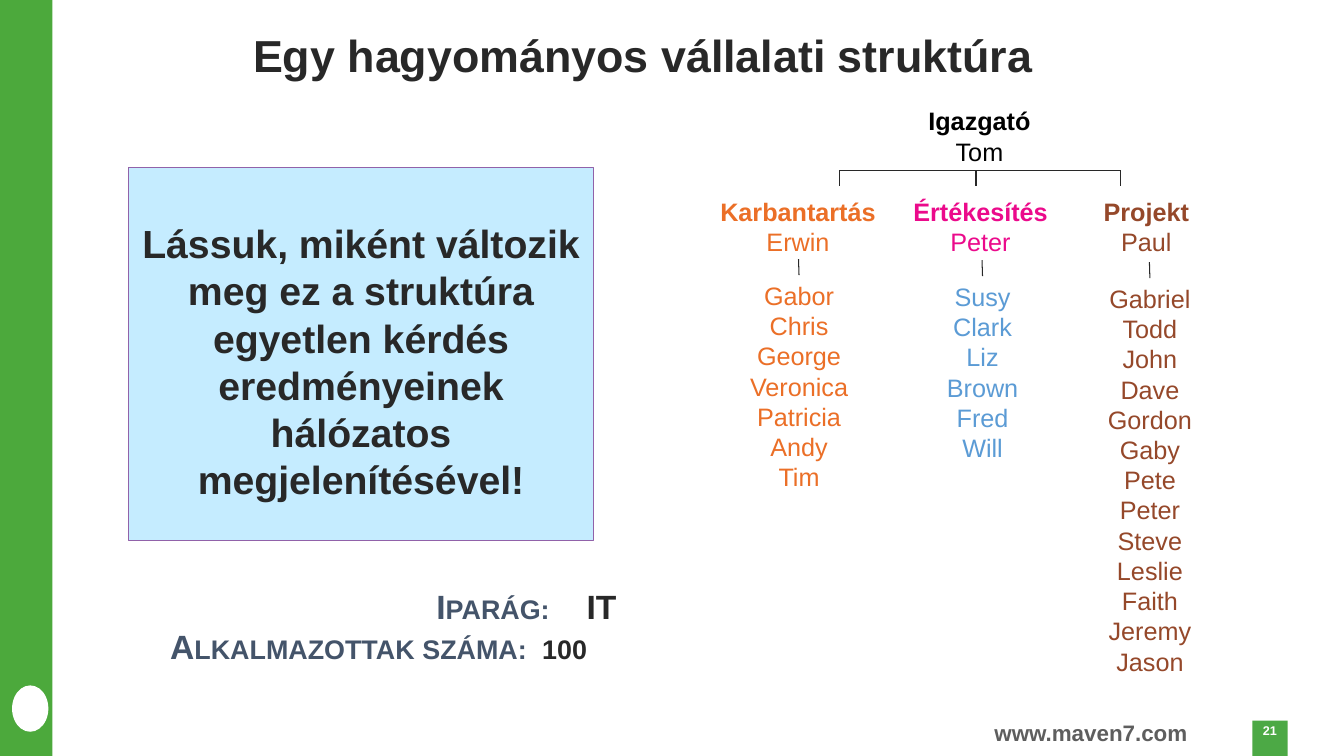
from pptx import Presentation
from pptx.dml.color import RGBColor
from pptx.enum.shapes import MSO_CONNECTOR, MSO_SHAPE
from pptx.enum.text import MSO_ANCHOR, PP_ALIGN
from pptx.oxml.ns import qn
from pptx.util import Pt
from lxml import etree

PX = 9144  # 100 px to the inch
RECT, OVAL = MSO_SHAPE.RECTANGLE, MSO_SHAPE.OVAL
STRAIGHT = MSO_CONNECTOR.STRAIGHT
LEFT, CENTER = PP_ALIGN.LEFT, PP_ALIGN.CENTER
TOP, MIDDLE = MSO_ANCHOR.TOP, MSO_ANCHOR.MIDDLE

WHITE = RGBColor(0xFF, 0xFF, 0xFF)
BLACK = RGBColor(0, 0, 0)
INK = RGBColor(0x28, 0x28, 0x28)
GREY = RGBColor(0x5E, 0x5E, 0x5E)
SLATE = RGBColor(0x44, 0x54, 0x6A)
BAND_GREEN = RGBColor(0x4C, 0xA9, 0x3C)
TAG_GREEN = RGBColor(0x4C, 0xA9, 0x45)
PALE_BLUE = RGBColor(0xC5, 0xEC, 0xFF)
PURPLE = RGBColor(0x91, 0x62, 0xA9)
ORANGE = RGBColor(0xEB, 0x6F, 0x27)
PINK = RGBColor(0xEB, 0x0A, 0x8B)
BLUE = RGBColor(0x5B, 0x9B, 0xD5)
BROWN = RGBColor(0x95, 0x48, 0x2A)

HEAD_H = 71
# head, its colour, head box left and width, team colour, team box left, top and height, team
DEPARTMENTS = [
    (("Karbantartás", "Erwin"), ORANGE, 690, 203, ORANGE, 707, 273, 222,
     ("Gabor", "Chris", "George", "Veronica", "Patricia", "Andy", "Tim")),
    (("Értékesítés", "Peter"), PINK, 892, 161, BLUE, 889, 274, 192,
     ("Susy", "Clark", "Liz", "Brown", "Fred", "Will")),
    (("Projekt", "Paul"), BROWN, 1053, 168, BROWN, 1055, 276, 404,
     ("Gabriel", "Todd", "John", "Dave", "Gordon", "Gaby", "Pete", "Peter",
      "Steve", "Leslie", "Faith", "Jeremy", "Jason")),
]


def emu(*lengths):
    return [n * PX for n in lengths]


def style(p, size, color, bold=False, align=CENTER):
    p.alignment = align
    f = p.font
    f.name, f.size, f.bold, f.color.rgb = "Arial", Pt(size), bold, color


def fill_text(sp, lines, size, color, bold=(), align=CENTER, anchor=TOP):
    """Write one paragraph per line; bold holds the indexes of the bold ones."""
    tf = sp.text_frame
    tf.word_wrap, tf.vertical_anchor = True, anchor
    for i, line in enumerate(lines):
        p = tf.paragraphs[0] if i == 0 else tf.add_paragraph()
        p.text = line
        style(p, size, color, i in bold, align)
    return sp


def add_text(s, box, lines, size, color, bold=()):
    return fill_text(s.shapes.add_textbox(*emu(*box)), lines, size, color, bold)


def add_block(s, kind, box, fill, line=None):
    sp = s.shapes.add_shape(kind, *emu(*box))
    sp.shadow.inherit = False
    sp.fill.solid()
    sp.fill.fore_color.rgb = fill
    if line is None:
        sp.line.fill.background()
    else:
        sp.line.color.rgb, sp.line.width = line, Pt(0.75)
    return sp


def add_line(s, x1, y1, x2, y2):
    c = s.shapes.add_connector(STRAIGHT, *emu(x1, y1, x2, y2))
    c.line.color.rgb, c.line.width = INK, Pt(0.75)
    etree.SubElement(c._element.spPr, qn("a:effectLst"))
    return c


def add_frame(s, width, height):
    """Side band with its emblem, page number and web address."""
    add_block(s, RECT, (0, 0, 52, height), BAND_GREEN)
    add_block(s, OVAL, (12, 680, 36, 46), WHITE)
    tag = add_block(s, RECT, (width - 91, height - 35, 35, 35), TAG_GREEN)
    tf = tag.text_frame
    tf.margin_left = tf.margin_right = tf.margin_bottom = 0
    tf.margin_top = 2 * PX
    fill_text(tag, ["21"], 9, WHITE, bold=(0,))
    add_text(s, (942, height - 41, 280, 37), ["www.maven7.com"], 16, GREY, bold=(0,))


def add_title(s, box, text):
    sp = s.shapes.title
    sp.left, sp.top, sp.width, sp.height = emu(*box)
    fill_text(sp, [text], 32, INK, bold=(0,), align=LEFT, anchor=MIDDLE)
    sp.text_frame.paragraphs[0].line_spacing = 0.9


def add_message(s, box, text):
    sp = add_block(s, RECT, box, PALE_BLUE, PURPLE)
    sp.text_frame.margin_top = 52 * PX
    fill_text(sp, [text], 28, INK, bold=(0,))


def add_facts(s, box, facts):
    """Each fact is a label and a value, with the tab stop of either."""
    tf = s.shapes.add_textbox(*emu(*box)).text_frame
    tf.word_wrap = True
    for i, (label, value, *stops) in enumerate(facts):
        p = tf.paragraphs[0] if i == 0 else tf.add_paragraph()
        tabs = etree.SubElement(p._p.get_or_add_pPr(), qn("a:tabLst"))
        for stop in stops:
            etree.SubElement(tabs, qn("a:tab"), pos=str(stop * PX), algn="l")
        style(p, 24, INK, True, LEFT)
        for text, color in (("\t" + label, SLATE), ("\t" + value, INK)):
            r = p.add_run()
            r.text = text
            r.font.color.rgb = color
            r._r.get_or_add_rPr().set("cap", "small")


def add_department(s, top, head, head_color, left, width, team_color,
                   team_left, team_top, team_h, team):
    add_text(s, (left, top, width, HEAD_H), head, 18, head_color, bold=(0,))
    names = add_text(s, (team_left, team_top, 171, team_h), team, 18, team_color)
    x = team_left + 85
    add_line(s, x, team_top - 16, x, team_top).end_connect(names, 0)


def add_org_chart(s, left, top):
    add_text(s, (left + 180, top, 203, HEAD_H), ("Igazgató", "Tom"), 18, BLACK, bold=(0,))
    bar_y = top + 69
    drops = [left + dx for dx in (143, 278, 421)]
    add_line(s, drops[0], bar_y, drops[-1], bar_y)
    for x in drops:
        add_line(s, x, bar_y, x, bar_y + 16)
    for department in DEPARTMENTS:
        add_department(s, top + 90, *department)


def main():
    prs = Presentation()
    prs.slide_width, prs.slide_height = emu(1333, 750)
    s = prs.slides.add_slide(prs.slide_layouts[5])
    add_frame(s, 1333, 750)
    add_title(s, (241, 31, 862, 53), "Egy hagyományos vállalati struktúra")
    add_message(s, (127, 166, 462, 370),
                "Lássuk, miként változik meg ez a struktúra egyetlen kérdés "
                "eredményeinek hálózatos megjelenítésével!")
    add_facts(s, (108, 576, 520, 91), [("Iparág:", "IT", 315, 464),
                                       ("Alkalmazottak száma:", "100", 51, 420)])
    add_org_chart(s, 690, 100)
    prs.save("out.pptx")


if __name__ == "__main__":
    main()
